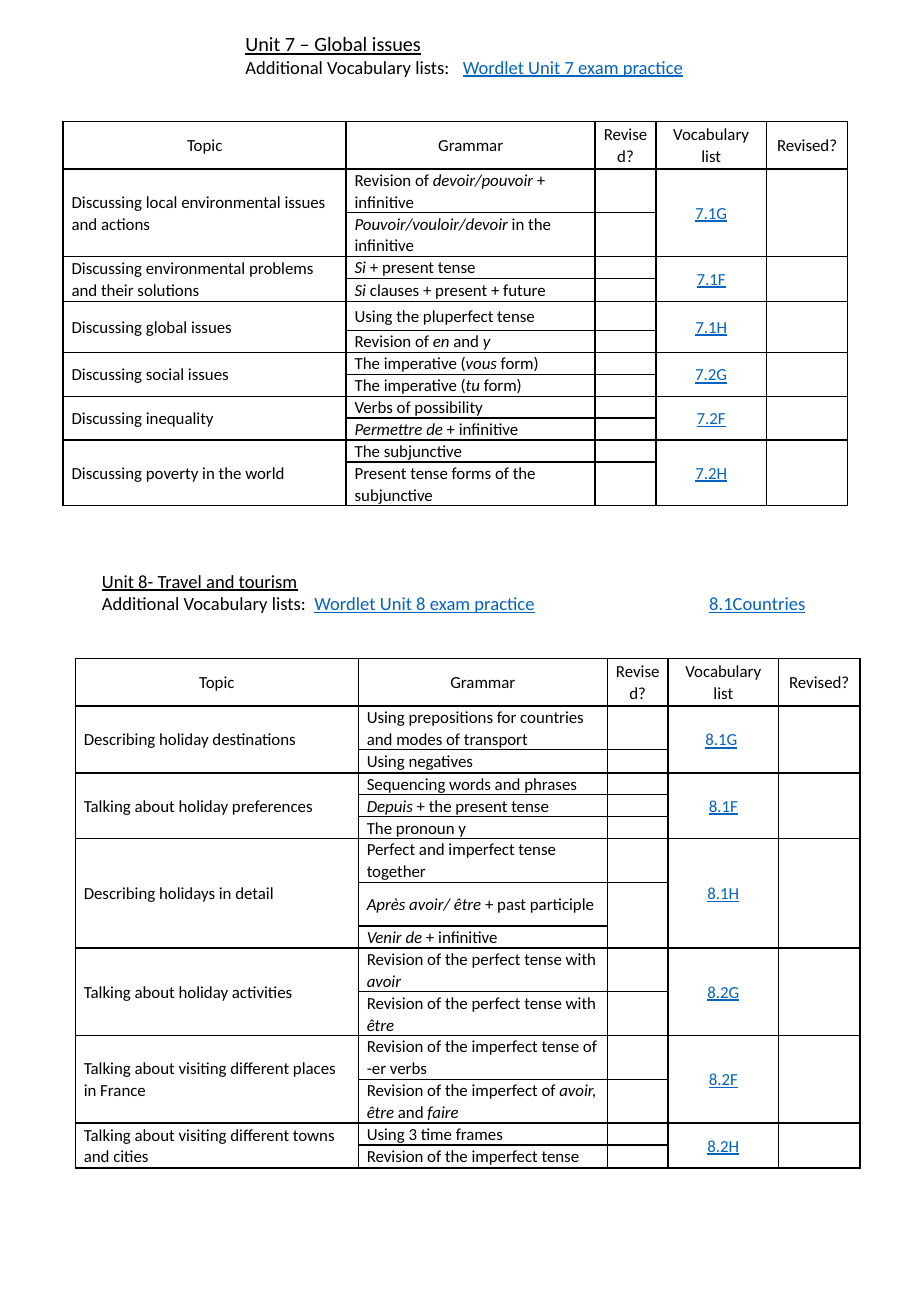
from pptx import Presentation
from pptx import util as u
from pptx.dml import color
from pptx.enum import text
from pptx.oxml import ns
from lxml import etree

INK, LINK = "000000", "0563C1"
MID, LEFT = text.PP_ALIGN.CENTER, text.PP_ALIGN.LEFT
HEADS = ["Topic", "Grammar", "Revised?", "Vocabulary list", "Revised?"]
COLS = [2.33, 2.05, 0.5, 0.91, 0.67]

GLOBAL = [
    ("Discussing local environmental issues and actions", "7.1G",
     [("Revision of *devoir/pouvoir* + infinitive", 0.36),
      ("*Pouvoir/vouloir/devoir* in the infinitive", 0.36)]),
    ("Discussing environmental problems and their solutions", "7.1F",
     [("*Si* + present tense", 0.18), ("*Si* clauses + present + future", 0.19)]),
    ("Discussing global issues", "7.1H",
     [("Using the pluperfect tense", 0.24), ("Revision of *en* and *y*", 0.18)]),
    ("Discussing social issues", "7.2G",
     [("The imperative (*vous* form)", 0.18), ("The imperative (*tu* form)", 0.18)]),
    ("Discussing inequality", "7.2F",
     [("Verbs of possibility", 0.18), ("*Permettre de* + infinitive", 0.18)]),
    ("Discussing poverty in the world", "7.2H",
     [("The subjunctive", 0.18), ("Present tense forms of the subjunctive", 0.36)]),
]
TRAVEL = [
    ("Describing holiday destinations", "8.1G ",
     [("Using prepositions for countries and modes of transport", 0.36),
      ("Using negatives", 0.19)]),
    ("Talking about holiday preferences", "8.1F",
     [("Sequencing words and phrases", 0.18), ("*Depuis* + the present tense", 0.18),
      ("The pronoun y", 0.18)]),
    ("Describing holidays in detail", "8.1H",
     [("Perfect and imperfect tense together", 0.36),
      ("*Après avoir/ être* + past participle", 0.36), ("*Venir de* + infinitive", 0.18)]),
    ("Talking about holiday activities", "8.2G",
     [("Revision of the perfect tense with *avoir*", 0.36),
      ("Revision of the perfect tense with *être*", 0.36)]),
    ("Talking about visiting different places in France", "8.2F",
     [("Revision of the imperfect tense of -er verbs", 0.36),
      ("Revision of the imperfect of *avoir, être *and* faire*", 0.36)]),
    ("Talking about visiting different towns and cities", "8.2H",
     [("Using 3 time frames", 0.18), ("Revision of the imperfect tense", 0.19)]),
]


def paint(font, tone):
    font.color.rgb = color.RGBColor.from_string(tone)


def write(para, words, size=10, align=LEFT, tone=INK, under=False, mark="italic"):
    para.alignment = align
    for i, part in enumerate(words.split("*")):
        if not part:
            continue
        run = para.add_run()
        run.text = part
        font = run.font
        font.name, font.size = "Calibri", u.Pt(size)
        link = i % 2 == 1 and mark == "link"
        font.italic = i % 2 == 1 and mark == "italic"
        font.underline = under or link
        paint(font, LINK if link else tone)


class Sheet:
    """Holds the page style and the current slide."""

    def __init__(self, deck):
        self.slide = deck.slides.add_slide(deck.slide_layouts[5])

    def head(self, box, at, title, size, line, tabs):
        box.left, box.top, box.width, box.height = map(u.Inches, at)
        frame = box.text_frame
        frame.word_wrap = True
        frame.auto_size = text.MSO_AUTO_SIZE.NONE
        frame.vertical_anchor = text.MSO_ANCHOR.TOP
        write(frame.paragraphs[0], title, size, under=True)
        write(frame.add_paragraph(), line, 11, mark="link")
        for para in frame.paragraphs:
            para.line_spacing = 1.0
        stops = etree.SubElement(frame.paragraphs[1]._p.get_or_add_pPr(), ns.qn("a:tabLst"))
        for tab in tabs:
            etree.SubElement(stops, ns.qn("a:tab"), pos=str(u.Inches(tab)), algn="l")

    def title(self, *args):
        self.head(self.slide.shapes.title, *args)

    def note(self, at, *args):
        self.head(self.slide.shapes.add_textbox(0, 0, 0, 0), at, *args)

    def cell(self, cell):
        cell.margin_left = cell.margin_right = u.Inches(0.07)
        cell.margin_top = cell.margin_bottom = 0
        cell.vertical_anchor = text.MSO_ANCHOR.MIDDLE
        para = cell.text_frame.paragraphs[0]
        para.line_spacing, para.space_after = 1.07, u.Pt(8)
        para._p.get_or_add_endParaRPr().set("sz", "1000")
        props = cell._tc.get_or_add_tcPr()
        for side in ("lnL", "lnR", "lnT", "lnB"):
            edge = etree.SubElement(props, ns.qn("a:" + side), w=str(u.Pt(1)))
            fill = etree.SubElement(edge, ns.qn("a:solidFill"))
            etree.SubElement(fill, ns.qn("a:srgbClr"), val=INK)
        cell.fill.background()

    def table(self, left, top, topics, joins=()):
        rows = [0.39] + [high for _, _, items in topics for _, high in items]
        grid = self.slide.shapes.add_table(
            len(rows), len(COLS), u.Inches(left), u.Inches(top),
            u.Inches(sum(COLS)), u.Inches(sum(rows))).table
        grid.first_row = grid.horz_banding = False
        for col, wide in zip(grid.columns, COLS):
            col.width = u.Inches(wide)
        for row, high in zip(grid.rows, rows):
            row.height = u.Inches(high)
        for cell in grid.iter_cells():
            self.cell(cell)

        def put(row, col, words, **form):
            write(grid.cell(row, col).text_frame.paragraphs[0], words, **form)

        for col, name in enumerate(HEADS):
            put(0, col, name, align=MID)
        row = 1
        for topic, code, items in topics:
            last = row + len(items) - 1
            for col in (0, 3, 4):
                grid.cell(row, col).merge(grid.cell(last, col))
            put(row, 0, topic)
            label = code.strip()
            put(row, 3, f"*{label}*{code[len(label):]}", align=MID, mark="link")
            for i, (words, _) in enumerate(items):
                put(row + i, 1, words)
            row = last + 1
        for start, end in joins:
            grid.cell(start, 2).merge(grid.cell(end, 2))


def main():
    deck = Presentation()
    deck.slide_width, deck.slide_height = u.Inches(7.5), u.Inches(10.83)
    page = Sheet(deck)
    page.title((1.92, 0.21, 4.59, 0.79), "Unit 7 – Global issues", 12,
               "Additional Vocabulary lists:\t*Wordlet Unit 7 exam practice*", [1.79])
    page.table(0.52, 1, GLOBAL)
    page.note((0.74, 4.64, 6.01, 0.77), "Unit 8- Travel and tourism", 11,
              "Additional Vocabulary lists:\t*Wordlet Unit 8 exam practice*\t*8.1Countries*",
              [1.75, 5])
    page.table(0.62, 5.42, TRAVEL, joins=[(7, 8)])
    deck.save("out.pptx")


if __name__ == "__main__":
    main()
